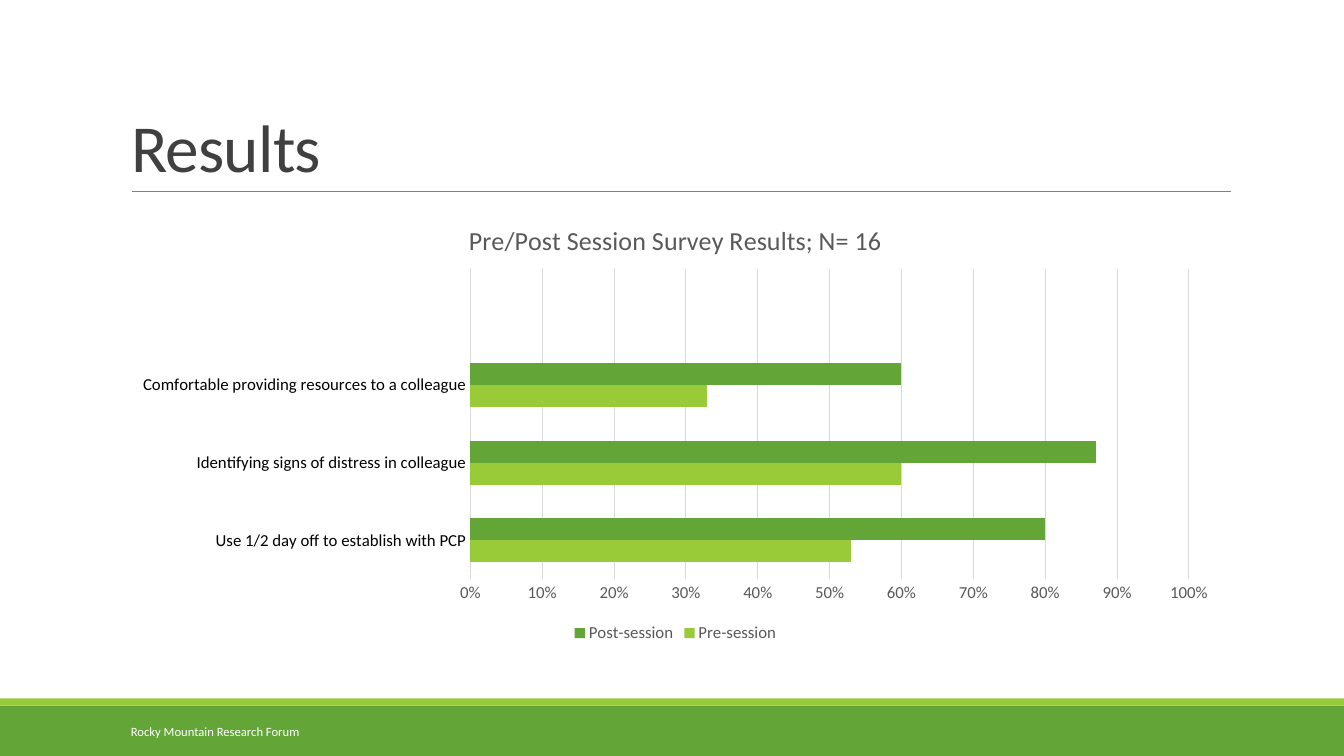
from dataclasses import dataclass

from lxml.etree import SubElement
from pptx import Presentation
from pptx.chart.data import CategoryChartData
from pptx.dml.color import RGBColor
from pptx.enum.chart import XL_CHART_TYPE as ChartType, XL_LEGEND_POSITION as LegendPosition
from pptx.enum.chart import XL_TICK_MARK as TickMark
from pptx.enum.shapes import MSO_CONNECTOR as Connector, MSO_SHAPE as Shape
from pptx.enum.text import MSO_ANCHOR as Anchor, MSO_AUTO_SIZE as AutoSize, PP_ALIGN as Align
from pptx.oxml.ns import qn
from pptx.util import Inches, Pt

TITLE = "Results"
FOOTER = "Rocky Mountain Research Forum"
CHART_TITLE = "Pre/Post Session Survey Results; N= 16"
CATEGORIES = [
    "Use 1/2 day off to establish with PCP",
    "Identifying signs of distress in colleague",
    "Comfortable providing resources to a colleague",
    "",
]
SERIES = [
    ("Pre-session", (0.53, 0.6, 0.33, None), "99CB38"),
    ("Post-session", (0.8, 0.87, 0.6, None), "63A537"),
]
BANDS = [(7, 0.5, "63A537"), (6.93, 0.07, "99CB38")]
WIDTH, HEIGHT = 13.33, 7.5
LEFT, CONTENT_WIDTH = 1.2, 11


@dataclass(frozen=True)
class Theme:
    """Colours and type sizes of the slide."""
    font: str = "Calibri"
    heading: str = "404040"
    label: str = "000000"
    muted: str = "595959"
    rule: str = "808080"
    grid: str = "D9D9D9"
    light: str = "FFFFFF"
    heading_size: float = 48
    chart_title_size: float = 18.6
    label_size: float = 12
    footer_size: float = 9


THEME = Theme()


def color(value):
    """Turn a hex string into a colour."""
    return RGBColor.from_string(value)


def style(font, size, value):
    """Apply the theme typeface with a size and colour."""
    font.name, font.size, font.bold = THEME.font, Pt(size), False
    font.color.rgb = color(value)


def place(box, left, top, width, height):
    """Move and size a shape in inches."""
    box.left, box.top, box.width, box.height = map(Inches, (left, top, width, height))


def set_layout(element, **settings):
    """Give a chart part a manual layout."""
    layout = element.find(qn("c:layout"))
    if layout is None:
        layout = SubElement(element, qn("c:layout"))
        overlay = element.find(qn("c:overlay"))
        if overlay is not None:
            overlay.addprevious(layout)
        else:
            element.insert(0, layout)
    for child in list(layout):
        layout.remove(child)
    manual = SubElement(layout, qn("c:manualLayout"))
    for name, value in settings.items():
        SubElement(manual, qn(f"c:{name}")).set("val", str(value))


def add_frame(page):
    """Draw the bottom bands and the rule under the title."""
    for top, height, fill in BANDS:
        band = page.shapes.add_shape(
            Shape.RECTANGLE, 0, Inches(top), Inches(WIDTH), Inches(height))
        band.shadow.inherit = False
        band.fill.solid()
        band.fill.fore_color.rgb = color(fill)
        band.line.fill.background()
    rule = page.shapes.add_connector(
        Connector.STRAIGHT, Inches(1.31), Inches(1.9), Inches(12.21), Inches(1.9))
    rule.line.color.rgb = color(THEME.rule)
    rule.line.width = Pt(0.5)
    SubElement(rule._element.spPr, qn("a:effectLst"))


def add_title(page):
    """Fill and format the title placeholder."""
    box = page.shapes.title
    place(box, LEFT, 0.31, CONTENT_WIDTH, 1.59)
    frame = box.text_frame
    frame.text = TITLE
    frame.auto_size = AutoSize.NONE
    frame.vertical_anchor = Anchor.BOTTOM
    para = frame.paragraphs[0]
    para.alignment = Align.LEFT
    para.line_spacing = 0.85
    style(para.font, THEME.heading_size, THEME.heading)
    para.runs[0].font._element.set("spc", "-50")


def add_footer(page):
    """Write the footer on the green band."""
    box = page.shapes.add_textbox(Inches(LEFT), Inches(7.06), Inches(2.7), Inches(0.4))
    frame = box.text_frame
    frame.text = FOOTER
    frame.word_wrap = True
    frame.vertical_anchor = Anchor.MIDDLE
    style(frame.paragraphs[0].font, THEME.footer_size, THEME.light)


def add_survey_chart(page):
    """Draw the clustered bars of the survey."""
    data = CategoryChartData(number_format="0%")
    data.categories = CATEGORIES
    for name, values, _ in SERIES:
        data.add_series(name, values)
    chart = page.shapes.add_chart(
        ChartType.BAR_CLUSTERED, Inches(LEFT), Inches(2.02),
        Inches(CONTENT_WIDTH), Inches(4.4), data).chart
    style(chart.font, THEME.label_size, THEME.label)

    chart.has_title = True
    heading = chart.chart_title
    heading.text_frame.text = CHART_TITLE
    heading.include_in_layout = False
    style(heading.text_frame.paragraphs[0].font, THEME.chart_title_size, THEME.muted)

    plot = chart.plots[0]
    plot.gap_width, plot.overlap, plot.vary_by_categories = 150, 0, False
    for series, (_, _, fill) in zip(plot.series, SERIES):
        series.format.fill.solid()
        series.format.fill.fore_color.rgb = color(fill)

    for axis, value in ((chart.category_axis, THEME.label), (chart.value_axis, THEME.muted)):
        axis.major_tick_mark = axis.minor_tick_mark = TickMark.NONE
        axis.format.line.fill.background()
        style(axis.tick_labels.font, THEME.label_size, value)
    scale = chart.value_axis
    scale.minimum_scale, scale.maximum_scale, scale.major_unit = 0, 1, 0.1
    scale.tick_labels.number_format = "0%"
    scale.tick_labels.number_format_is_linked = False
    scale.major_gridlines.format.line.color.rgb = color(THEME.grid)
    scale.major_gridlines.format.line.width = Pt(0.75)

    chart.has_legend = True
    chart.legend.position = LegendPosition.BOTTOM
    chart.legend.include_in_layout = False
    style(chart.legend.font, THEME.label_size, THEME.muted)
    area = chart._chartSpace.chart.plotArea
    set_layout(area, layoutTarget="inner", xMode="edge", yMode="edge",
               x=0.315, y=0.147, w=0.648, h=0.7)


def main():
    """Build and save the slide."""
    deck = Presentation()
    deck.slide_width, deck.slide_height = Inches(WIDTH), Inches(HEIGHT)
    page = deck.slides.add_slide(deck.slide_layouts[5])
    add_frame(page)
    add_title(page)
    add_survey_chart(page)
    add_footer(page)
    deck.save("out.pptx")


if __name__ == "__main__":
    main()
